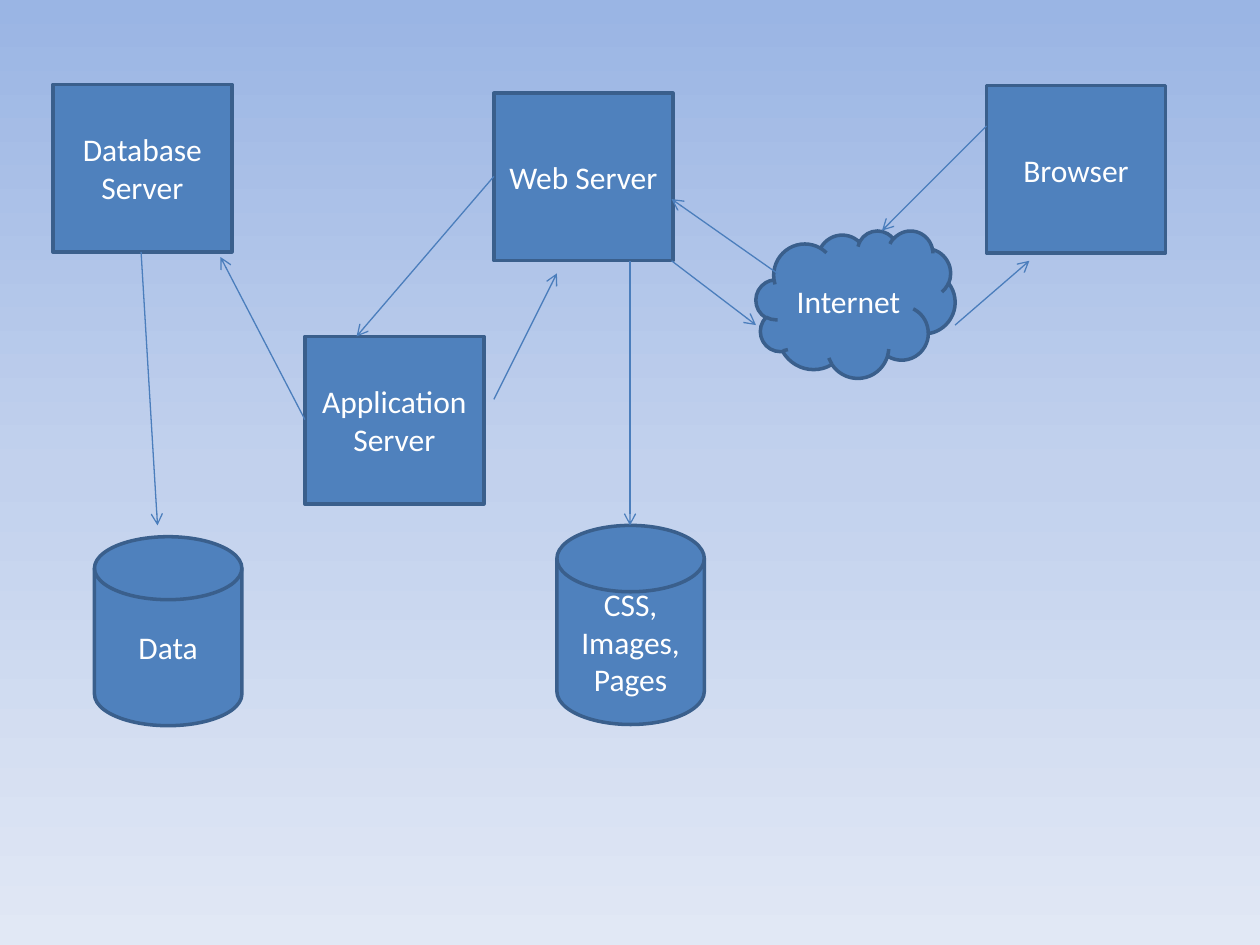
"""Build a slide showing how a browser request travels through web, application and database servers."""
from lxml import etree
from pptx import Presentation, dml, oxml
from pptx import util as u
from pptx.dml import color
from pptx.enum import shapes, text
from pptx.oxml import ns


def paint(target, value):
    target.solid()
    target.fore_color.rgb = color.RGBColor.from_string(value)


deck = Presentation()
deck.slide_width, deck.slide_height = u.Inches(10), u.Inches(7.5)
page = deck.slides.add_slide(deck.slide_layouts[6])

stops = "".join(
    f'<a:gs pos="{position * 1000}"><a:srgbClr val="{value}"/></a:gs>'
    for position, value in [(0, "9AB5E4"), (50, "C2D1ED"), (100, "E1E8F5")]
)
background = oxml.parse_xml(
    f'<p:bg {ns.nsdecls("p", "a")}><p:bgPr><a:gradFill rotWithShape="1">'
    f'<a:gsLst>{stops}</a:gsLst><a:lin ang="5400000" scaled="0"/>'
    '</a:gradFill><a:effectLst/></p:bgPr></p:bg>'
)
page.element.cSld.insert(0, background)

server = shapes.MSO_SHAPE.RECTANGLE
cloud = shapes.MSO_SHAPE.CLOUD
store = shapes.MSO_SHAPE.FLOWCHART_MAGNETIC_DISK
nodes = [
    (server, "Database Server", 0.42, 0.67, 1.42, 1.33),
    (server, "Application Server", 2.42, 2.67, 1.42, 1.33),
    (server, "Web Server", 3.92, 0.74, 1.42, 1.33),
    (server, "Browser", 7.83, 0.68, 1.42, 1.33),
    (cloud, "Internet", 6, 1.83, 1.58, 1.17),
    (store, "Data", 0.75, 4.26, 1.17, 1.5),
    (store, "CSS, Images, Pages", 4.42, 4.17, 1.17, 1.58),
]
for kind, label, *frame in nodes:
    box = page.shapes.add_shape(kind, *map(u.Inches, frame))
    box.shadow.inherit = False
    paint(box.fill, "4F81BD")
    paint(box.line.fill, "3A5F8C")
    box.line.width = u.Pt(2)
    box.text_frame.word_wrap = True
    box.text_frame.vertical_anchor = text.MSO_ANCHOR.MIDDLE
    para = box.text_frame.paragraphs[0]
    para.text = label
    para.alignment = text.PP_ALIGN.CENTER
    para.font.name = "Calibri"
    para.font.size = u.Pt(18)
    paint(para.font.fill, "FFFFFF")

arrows = [
    (1.12, 2, 1.25, 4.17),
    (5, 2.07, 5, 4.17),
    (7.83, 1, 7, 1.83),
    (6.17, 2.17, 5.33, 1.58),
    (5.33, 2.07, 6, 2.58),
    (7.58, 2.58, 8.17, 2.07),
    (3.92, 1.4, 2.83, 2.67),
    (3.92, 3.17, 4.42, 2.17),
    (2.42, 3.33, 1.75, 2.04),
]
for ends in arrows:
    arrow = page.shapes.add_connector(shapes.MSO_CONNECTOR.STRAIGHT, *map(u.Inches, ends))
    paint(arrow.line.fill, "4B7EBC")
    arrow.line.width = u.Pt(0.75)
    etree.SubElement(arrow.line.fill._xPr, ns.qn("a:tailEnd"), type="arrow")
    etree.SubElement(arrow.element.spPr, ns.qn("a:effectLst"))

deck.save("out.pptx")
